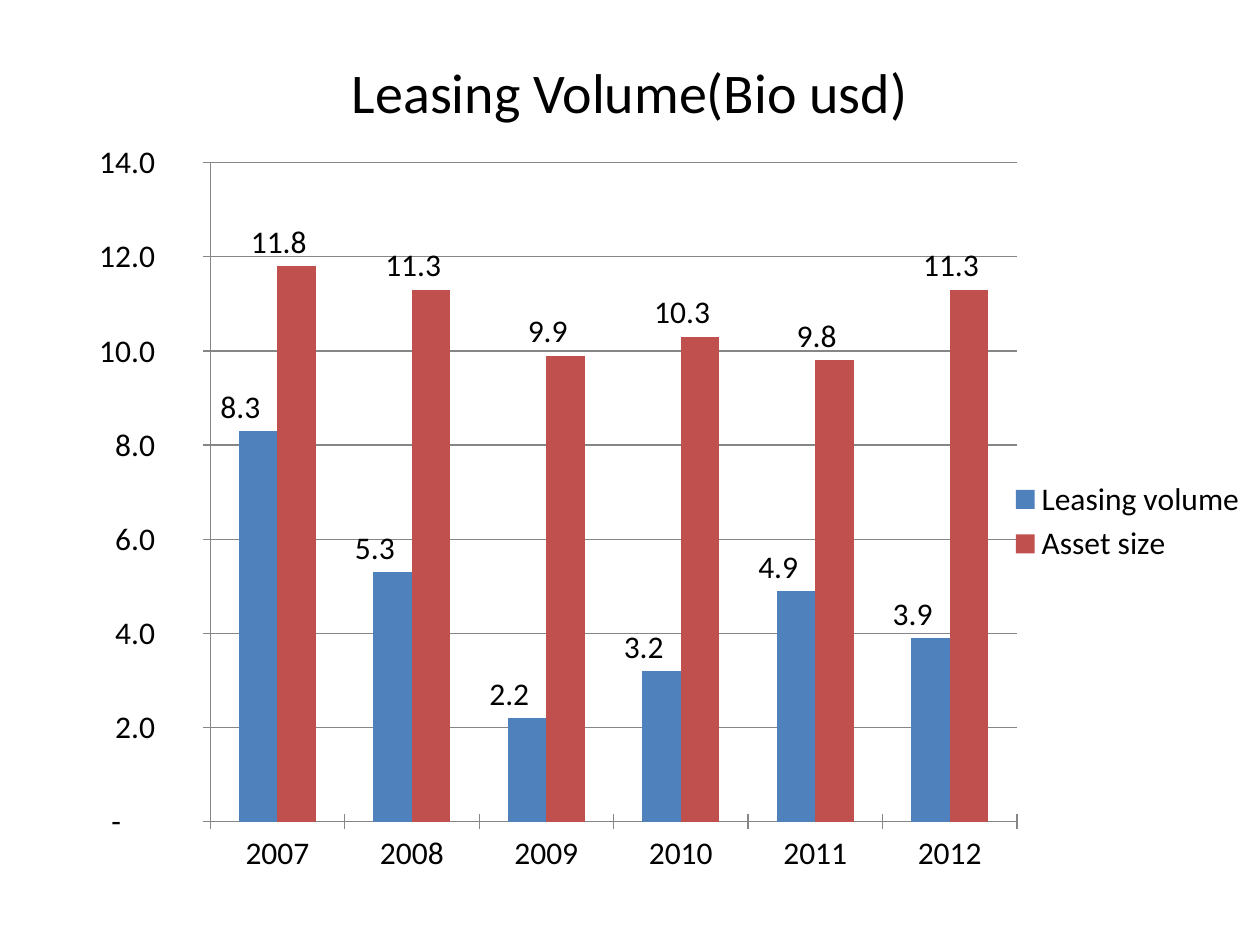
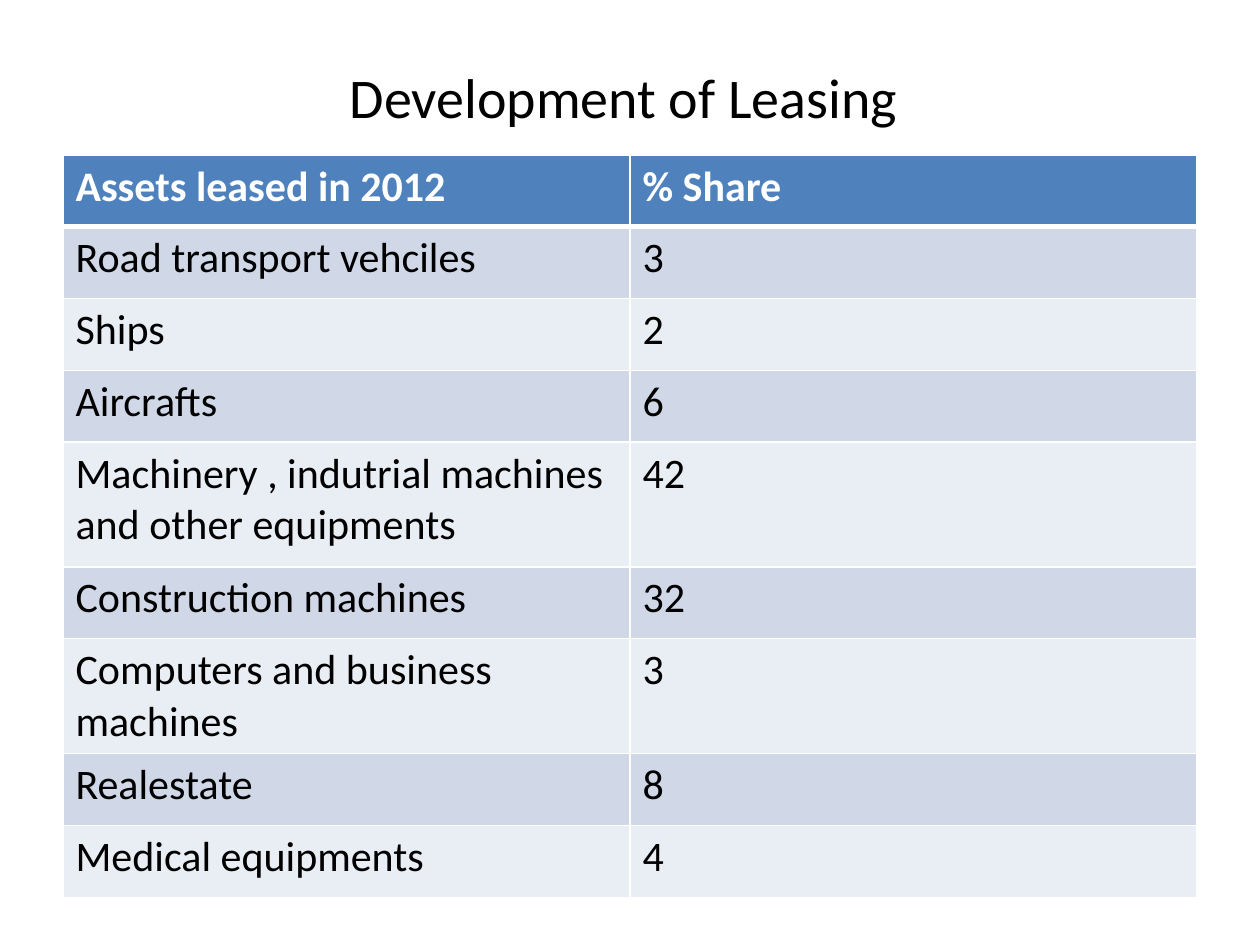
from lxml import etree
from pptx import Presentation
from pptx.chart.data import CategoryChartData
from pptx.dml.color import RGBColor
from pptx.enum.chart import XL_CHART_TYPE, XL_LABEL_POSITION, XL_LEGEND_POSITION, XL_TICK_MARK
from pptx.enum.text import MSO_ANCHOR, PP_ALIGN
from pptx.oxml import parse_xml
from pptx.oxml.ns import nsdecls, qn
from pptx.util import Inches, Pt

FONT = "Calibri"
BLACK, WHITE, GRAY = "000000", "FFFFFF", "868686"
BLUE, RED = "4F81BD", "C0504D"
BANDS = ("D0D8E8", "E9EDF4")
MARGIN, CONTENT_WIDTH, TITLE_TOP = 0.5, 9, 0.3
ROW_HEIGHT, TALL_ROW_HEIGHT = 0.57, 0.99
NUMBER_FORMAT = r'_-* #,##0.0\ _T_L_-;\-* #,##0.0\ _T_L_-;_-* "-"??\ _T_L_-;_-@_-'
PLOT_AREA = {"x": 0.123, "y": 0.036, "w": 0.674, "h": 0.852}

YEARS = ["2007", "2008", "2009", "2010", "2011", "2012"]
SERIES = [
    ("Leasing volume", [8.3, 5.3, 2.2, 3.2, 4.9, 3.9], BLUE),
    ("Asset size", [11.8, 11.3, 9.9, 10.3, 9.8, 11.3], RED),
]
ASSET_ROWS = [
    ("Assets leased in 2012", "% Share"),
    ("Road transport vehciles", "3"),
    ("Ships", "2"),
    ("Aircrafts", "6"),
    ("Machinery , indutrial machines and other equipments", "42"),
    ("Construction machines", "32"),
    ("Computers and business machines", "3"),
    ("Realestate", "8"),
    ("Medical equipments", "4"),
]
TALL_ROW = 4


def color(value):
    return RGBColor.from_string(value)


def style_font(font, size, font_color=BLACK, bold=False):
    font.name = FONT
    font.size = Pt(size)
    font.bold = bold
    font.color.rgb = color(font_color)


def add_titled_slide(presentation, text, title_height):
    slide = presentation.slides.add_slide(presentation.slide_layouts[5])
    title = slide.shapes.title
    title.left, title.top = Inches(MARGIN), Inches(TITLE_TOP)
    title.width, title.height = Inches(CONTENT_WIDTH), Inches(title_height)
    title.text_frame.text = text
    title.text_frame.vertical_anchor = MSO_ANCHOR.MIDDLE
    paragraph = title.text_frame.paragraphs[0]
    paragraph.alignment = PP_ALIGN.CENTER
    style_font(paragraph.runs[0].font, 32)
    return slide


def style_line(line):
    line.color.rgb = color(GRAY)
    line.width = Pt(0.75)


def place_plot_area(chart):
    plot_area = chart.element.find(".//" + qn("c:plotArea"))
    for layout in plot_area.findall(qn("c:layout")):
        plot_area.remove(layout)
    layout = parse_xml(f"<c:layout {nsdecls('c')}><c:manualLayout/></c:layout>")
    settings = {"layoutTarget": "inner", "xMode": "edge", "yMode": "edge", **PLOT_AREA}
    for name, value in settings.items():
        etree.SubElement(layout[0], qn(f"c:{name}")).set("val", str(value))
    plot_area.insert(0, layout)


def add_leasing_chart(slide):
    data = CategoryChartData(number_format=NUMBER_FORMAT)
    data.categories = YEARS
    for name, values, _ in SERIES:
        data.add_series(name, values)
    chart = slide.shapes.add_chart(
        XL_CHART_TYPE.COLUMN_CLUSTERED, Inches(MARGIN), Inches(1.07),
        Inches(9.5), Inches(6.14), data).chart
    chart.has_title = False
    style_font(chart.font, 18)
    place_plot_area(chart)

    # Axes and gridlines
    for axis in (chart.category_axis, chart.value_axis):
        axis.major_tick_mark = XL_TICK_MARK.CROSS
        axis.minor_tick_mark = XL_TICK_MARK.NONE
        style_line(axis.format.line)
    chart.value_axis.has_major_gridlines = True
    style_line(chart.value_axis.major_gridlines.format.line)
    chart.value_axis.minimum_scale = 0
    chart.value_axis.maximum_scale = 14
    chart.value_axis.major_unit = 2
    chart.value_axis.tick_labels.number_format = NUMBER_FORMAT
    chart.value_axis.tick_labels.number_format_is_linked = False

    # Columns and their labels
    plot = chart.plots[0]
    plot.gap_width = 150
    plot.overlap = 0
    plot.vary_by_categories = False
    for series, (_, _, series_color) in zip(plot.series, SERIES):
        series.format.fill.solid()
        series.format.fill.fore_color.rgb = color(series_color)
        labels = series.data_labels
        labels.show_value = True
        labels.position = XL_LABEL_POSITION.OUTSIDE_END
        labels.number_format = NUMBER_FORMAT
        labels.number_format_is_linked = False
        style_font(labels.font, 18)

    # Legend
    chart.has_legend = True
    chart.legend.position = XL_LEGEND_POSITION.RIGHT
    chart.legend.include_in_layout = False


def set_borders(cell, widths):
    properties = cell._tc.get_or_add_tcPr()
    for side, width in widths.items():
        properties.append(parse_xml(
            f'<a:ln{side} {nsdecls("a")} w="{Pt(width)}"><a:solidFill>'
            f'<a:srgbClr val="{WHITE}"/></a:solidFill></a:ln{side}>'))


def style_cell(cell, text, row_index):
    is_header = row_index == 0
    cell.text_frame.text = text
    style_font(cell.text_frame.paragraphs[0].runs[0].font, 24,
               WHITE if is_header else BLACK, is_header)
    set_borders(cell, {"L": 1, "R": 1, "T": 3 if row_index == 1 else 1,
                       "B": 3 if is_header else 1})
    cell.fill.solid()
    cell.fill.fore_color.rgb = color(BLUE if is_header else BANDS[(row_index - 1) % 2])


def add_asset_table(slide):
    row_count, column_count = len(ASSET_ROWS), len(ASSET_ROWS[0])
    table = slide.shapes.add_table(
        row_count, column_count, Inches(MARGIN), Inches(1.23), Inches(CONTENT_WIDTH),
        Inches(ROW_HEIGHT * (row_count - 1) + TALL_ROW_HEIGHT)).table
    for row_index, texts in enumerate(ASSET_ROWS):
        height = TALL_ROW_HEIGHT if row_index == TALL_ROW else ROW_HEIGHT
        table.rows[row_index].height = Inches(height)
        for column_index, text in enumerate(texts):
            style_cell(table.cell(row_index, column_index), text, row_index)


def main():
    presentation = Presentation()
    presentation.slide_width = Inches(10)
    presentation.slide_height = Inches(7.5)
    add_leasing_chart(add_titled_slide(presentation, "Leasing Volume(Bio usd)", 0.85))
    add_asset_table(add_titled_slide(presentation, "Development of Leasing ", 0.93))
    presentation.save("out.pptx")


if __name__ == "__main__":
    main()
